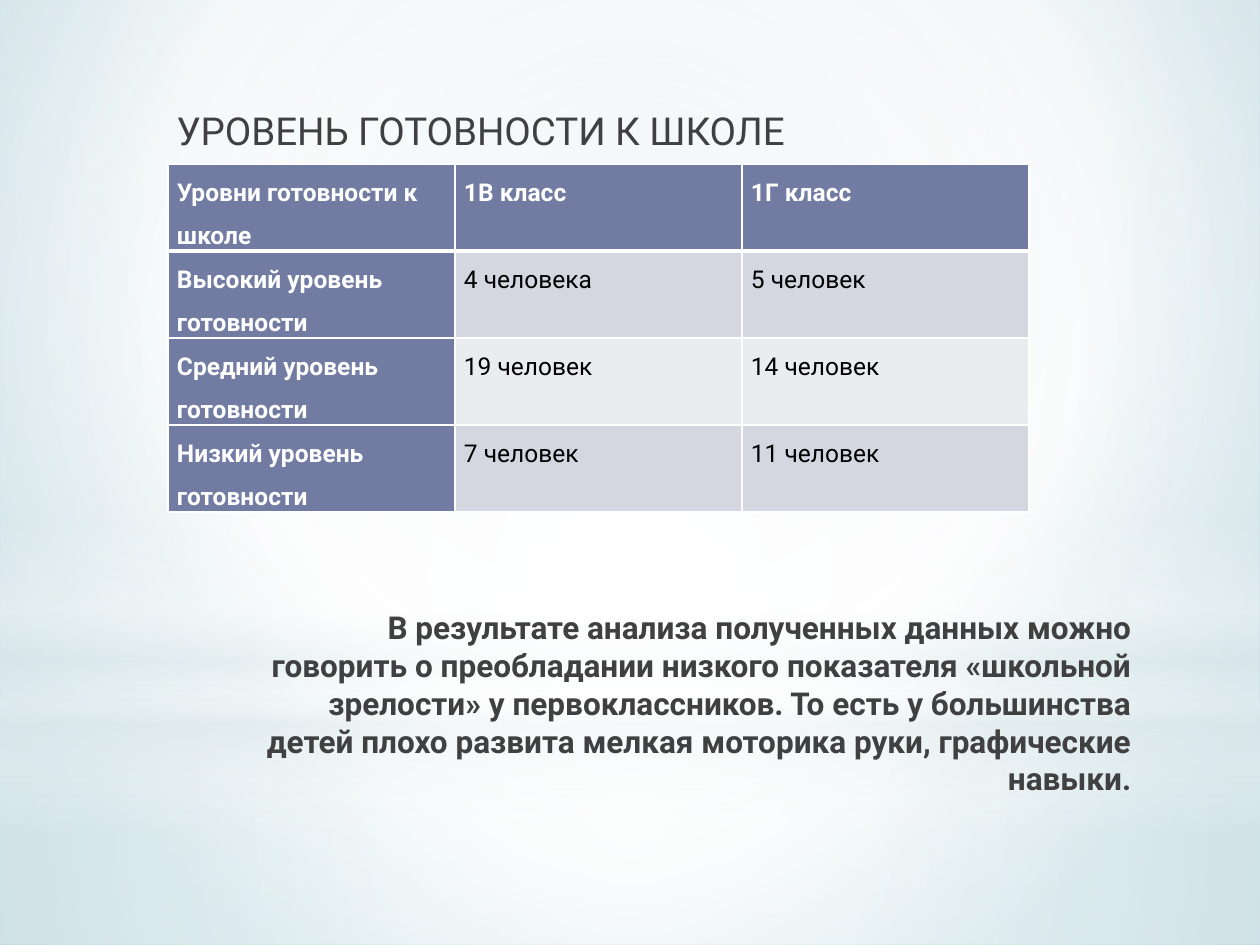
from lxml import etree
from pptx import Presentation
from pptx.dml.color import RGBColor
from pptx.enum.shapes import MSO_SHAPE as Shape
from pptx.enum.text import MSO_ANCHOR as Anchor, MSO_AUTO_SIZE as Fit, PP_ALIGN as Align
from pptx.oxml import parse_xml
from pptx.oxml.ns import nsdecls, qn
from pptx.util import Pt

PX = 914400 // 126
FONT = "Roboto"
DARK, WHITE, BLACK, HEAD = "404040", "FFFFFF", "000000", "727CA3"
BANDS = ["D5D7E0", "EBECF0"]
MIST = "DDE9EC"
MID = (50, 50, 50, 50)

TITLE = ("В результате анализа полученных данных можно говорить о преобладании "
         "низкого показателя «школьной зрелости» у первоклассников. То есть у "
         "большинства детей плохо развита мелкая моторика руки, графические навыки.")
ROWS = [
    ["Уровни готовности к школе", "1В класс", "1Г класс"],
    ["Высокий уровень готовности", "4 человека", "5 человек"],
    ["Средний уровень готовности", "19 человек", "14 человек"],
    ["Низкий уровень готовности", "7 человек", "11 человек"],
]


def px(*nums):
    return [n * PX for n in nums]


def color(code):
    return RGBColor.from_string(code)


def style(para, size, code, bold=False):
    for run in para.runs:
        font = run.font
        font.name, font.size, font.bold = FONT, Pt(size), bold
        font.color.rgb = color(code)


def grad(stops, focus=None):
    """Gradient of (place, colour, opacity) stops: round at focus, else downward."""
    marks = "".join(
        f'<a:gs pos="{at * 1000}"><a:srgbClr val="{code}">'
        f'<a:alpha val="{alpha * 1000}"/></a:srgbClr></a:gs>'
        for at, code, alpha in stops)
    if focus:
        rect = " ".join(f'{k}="{v * 1000}"' for k, v in zip("ltrb", focus))
        way = f'<a:path path="circle"><a:fillToRect {rect}/></a:path>'
    else:
        way = '<a:lin ang="5400000" scaled="0"/>'
    return parse_xml(f'<a:gradFill {nsdecls("a")} rotWithShape="1">'
                     f'<a:gsLst>{marks}</a:gsLst>{way}</a:gradFill>')


def swap(owner, fill):
    """Put a gradient in place of the solid fill inside owner."""
    old = next(owner.iter(qn("a:solidFill")))
    old.getparent().replace(old, fill)


def veil(slide, kind, box, fill):
    shape = slide.shapes.add_shape(kind, *px(*box))
    shape.shadow.inherit = False
    shape.line.fill.background()
    shape.fill.solid()
    shape.fill.fore_color.rgb = color(WHITE)
    swap(shape._element.spPr, fill)


def backdrop(slide, box):
    x, y, w, h = box
    back = slide.background.fill
    back.solid()
    back.fore_color.rgb = color(WHITE)
    swap(slide._element.cSld, grad(
        [(0, "D0E2E6", 100), (60, WHITE, 100), (100, "9BC8D4", 100)], (20, 10, 20, 60)))
    cut = 703
    veil(slide, Shape.RECTANGLE, (x, y + cut, w, h - cut),
         grad([(0, WHITE, 91), (37, WHITE, 76), (100, MIST, 79)], MID))
    veil(slide, Shape.RECTANGLE, (x, y, w, cut),
         grad([(0, WHITE, 89), (48, WHITE, 62), (100, MIST, 79)], MID))
    veil(slide, Shape.RECTANGLE, (x, y + 519, w, 315),
         grad([(0, WHITE, 0), (29, WHITE, 30), (45, MIST, 40),
               (55, WHITE, 26), (65, MIST, 60), (100, WHITE, 0)]))
    veil(slide, Shape.OVAL, (x, y + 221, w, cut),
         grad([(0, WHITE, 100), (56, WHITE, 0)], MID))


def place(slide, holder, box, text):
    """Move a placeholder to the front and into its box, and give it text."""
    slide.shapes._spTree.append(holder._element)
    holder.left, holder.top, holder.width, holder.height = px(*box)
    frame = holder.text_frame
    frame.text = text
    frame.word_wrap, frame.auto_size = True, Fit.NONE
    frame.vertical_anchor = Anchor.TOP
    return frame.paragraphs[0]


def title(slide, box):
    para = place(slide, slide.shapes.title, box, TITLE)
    para.alignment = Align.RIGHT
    style(para, 18, DARK, True)


def body(slide, box):
    para = place(slide, slide.placeholders[1], box, "УРОВЕНЬ ГОТОВНОСТИ К ШКОЛЕ")
    para.space_before, para.space_after = Pt(4), Pt(3)
    props = para._p.get_or_add_pPr()
    props.set("marL", str(6 * PX))
    props.set("indent", "0")
    etree.SubElement(props, qn("a:buNone"))
    style(para, 22, DARK)


def border(cell, low):
    """White lines on all four sides; low is the width of the bottom one."""
    props = cell._tc.get_or_add_tcPr()
    for n, (side, wide) in enumerate(zip("LRTB", (1, 1, 1, low))):
        props.insert(n, parse_xml(
            f'<a:ln{side} {nsdecls("a")} w="{Pt(wide)}"><a:solidFill>'
            f'<a:srgbClr val="{WHITE}"/></a:solidFill></a:ln{side}>'))


def table(slide, box):
    x, y, w, h = box
    grid = slide.shapes.add_table(len(ROWS), len(ROWS[0]), *px(x, y, w, h)).table
    for row in grid.rows:
        row.height = h // len(ROWS) * PX
    for r, row in enumerate(ROWS):
        for c, text in enumerate(row):
            cell = grid.cell(r, c)
            head = r == 0 or c == 0
            cell.text = text
            cell.margin_left = cell.margin_right = 9 * PX
            cell.margin_top = cell.margin_bottom = 0
            cell.fill.solid()
            cell.fill.fore_color.rgb = color(HEAD if head else BANDS[(r - 1) % 2])
            border(cell, 3 if r == 0 else 1)
            para = cell.text_frame.paragraphs[0]
            para.line_spacing = 1.5
            style(para, 14, WHITE if head else BLACK, head)


def main():
    deck = Presentation()
    deck.slide_width, deck.slide_height = px(1260, 945)
    slide = deck.slides.add_slide(deck.slide_layouts[1])
    backdrop(slide, (0, 0, 1260, 945))
    title(slide, (247, 602, 897, 158))
    body(slide, (158, 101, 882, 479))
    table(slide, (168, 164, 861, 348))
    deck.save("out.pptx")


if __name__ == "__main__":
    main()
